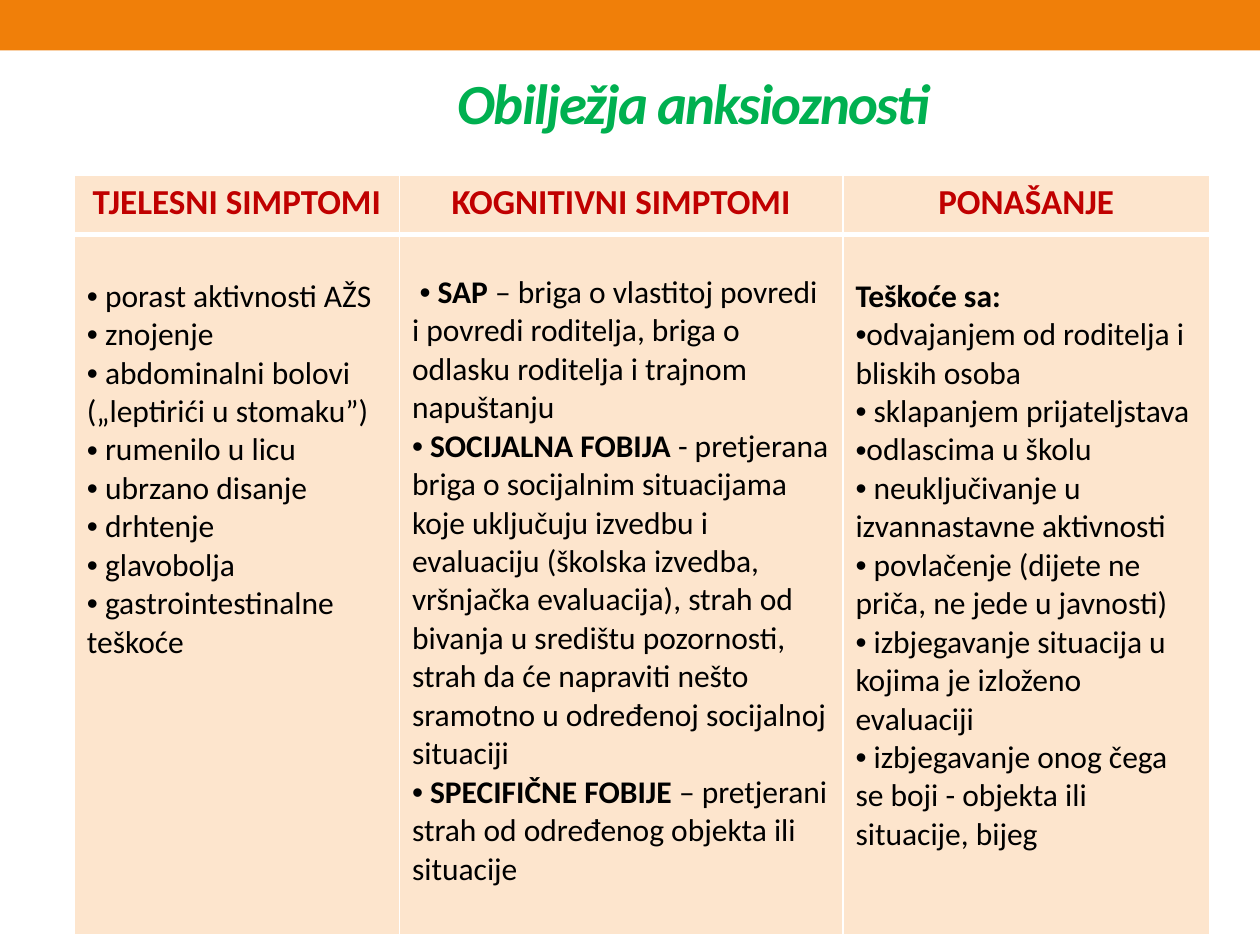
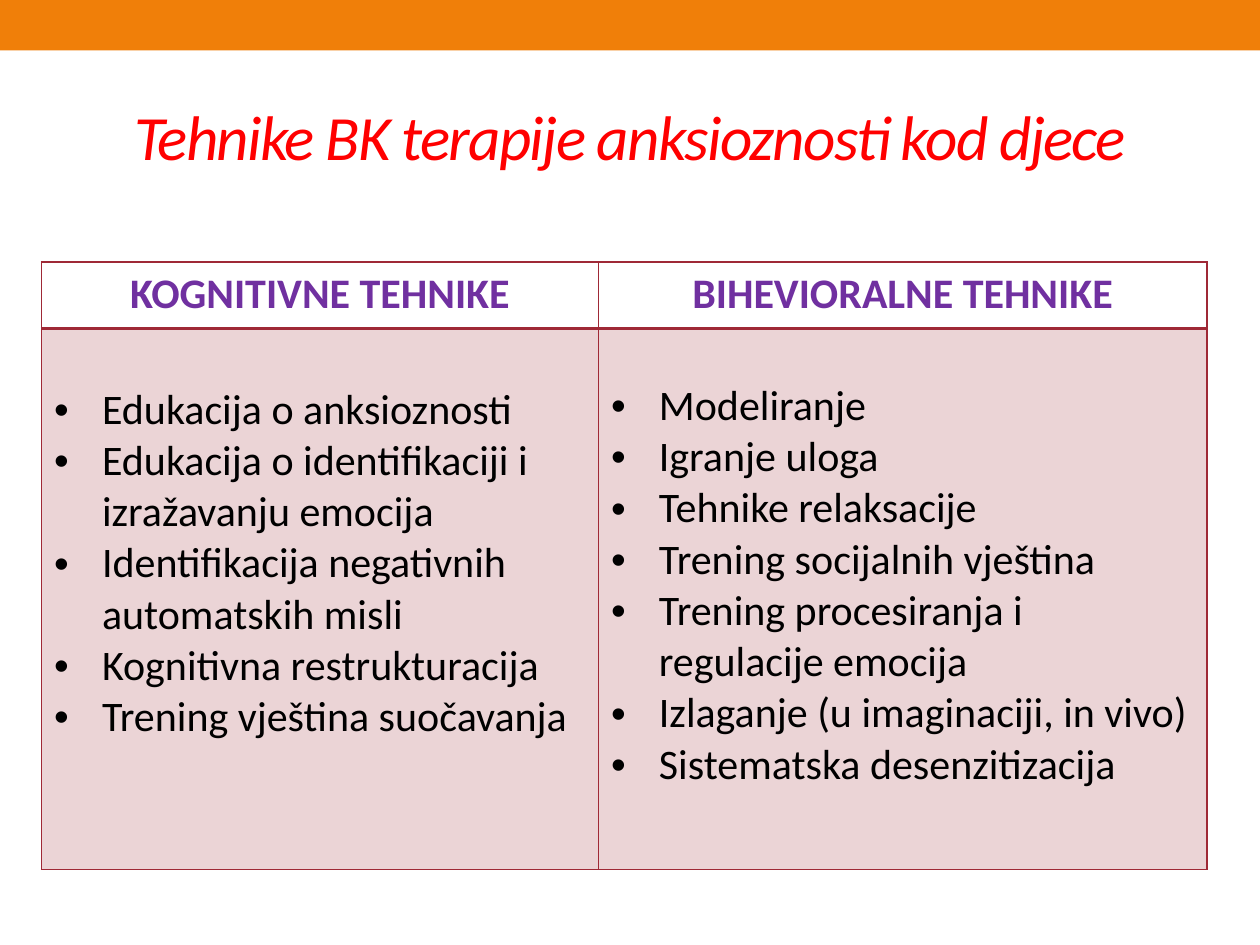
from dataclasses import dataclass

from lxml.etree import SubElement
from pptx import Presentation
from pptx.dml.color import RGBColor
from pptx.enum.shapes import MSO_SHAPE as Shape
from pptx.enum.text import MSO_ANCHOR as Anchor, PP_ALIGN as Align
from pptx.oxml.ns import qn
from pptx.util import Inches, Pt


@dataclass(frozen=True)
class Theme:
    font: str = "Calibri"
    bullet_font: str = "Arial"
    band: str = "F07F09"
    text: str = "000000"
    green: str = "00B050"
    red: str = "FF0000"
    dark_red: str = "C00000"
    purple: str = "7030A0"
    white: str = "FFFFFF"
    peach: str = "FDE5CD"
    wine: str = "9F2936"
    title_size: float = 36
    small_title_size: float = 32.4
    head_size: float = 20
    body_size: float = 18
    large_size: float = 24


THEME = Theme()


@dataclass(frozen=True)
class Title:
    text: str
    left: float
    top: float
    height: float
    size: float
    color: str
    bold: bool = False


@dataclass(frozen=True)
class Item:
    text: str
    lead: str = ""
    bullet: bool = True
    first_indent: float = 0


@dataclass(frozen=True)
class Column:
    head: str
    width: float
    items: list[Item]
    top_margin: float


@dataclass(frozen=True)
class TableStyle:
    head_size: float
    head_color: str
    body_size: float
    border: str
    rule_width: float
    fill: str
    head_fill: str | None = None
    fill_alpha: int = 100
    hanging: float = 0


def items(*texts: str) -> list[Item]:
    return [Item(text) for text in texts]


def format_run(r, size: float, color: str, bold: bool = False, italic: bool = False) -> None:
    font = r.font
    font.name, font.size = THEME.font, Pt(size)
    font.bold, font.italic = bold, italic
    font.color.rgb = RGBColor.from_string(color)


def add_band(s) -> None:
    band = s.shapes.add_shape(Shape.RECTANGLE, 0, 0, Inches(10), Inches(0.4))
    band.shadow.inherit = False
    band.fill.solid()
    band.fill.fore_color.rgb = RGBColor.from_string(THEME.band)
    band.line.fill.background()


def add_title(s, title: Title) -> None:
    sp = s.shapes.add_textbox(Inches(title.left), Inches(title.top), Inches(9), Inches(title.height))
    tf = sp.text_frame
    tf.word_wrap = True
    tf.vertical_anchor = Anchor.MIDDLE
    tf.text = title.text
    p = tf.paragraphs[0]
    p.alignment = Align.CENTER
    r = p.runs[0]
    format_run(r, title.size, title.color, title.bold, italic=True)
    r.font._element.set("spc", "-100")


def set_borders(cell, color: str, widths: dict[str, float]) -> None:
    tc_pr = cell._tc.get_or_add_tcPr()
    for side in ("L", "R", "T", "B"):
        ln = SubElement(tc_pr, qn(f"a:ln{side}"), w=str(Pt(widths.get(side, 1))))
        fill = SubElement(ln, qn("a:solidFill"))
        SubElement(fill, qn("a:srgbClr"), val=color)


def fill_cell(cell, color: str | None, alpha: int = 100) -> None:
    if color is None:
        cell.fill.background()
        return
    cell.fill.solid()
    cell.fill.fore_color.rgb = RGBColor.from_string(color)
    if alpha < 100:
        clr = cell._tc.tcPr.find(f"{qn('a:solidFill')}/{qn('a:srgbClr')}")
        SubElement(clr, qn("a:alpha"), val=str(alpha * 1000))


def set_bullet(p, margin: float, indent: float) -> None:
    p_pr = p._p.get_or_add_pPr()
    p_pr.set("marL", str(Inches(margin)))
    p_pr.set("indent", str(Inches(indent)))
    SubElement(p_pr, qn("a:buFont"), typeface=THEME.bullet_font)
    SubElement(p_pr, qn("a:buChar"), char="•")


def write_head(cell, text: str, style: TableStyle) -> None:
    cell.text_frame.text = text
    p = cell.text_frame.paragraphs[0]
    p.alignment = Align.CENTER
    format_run(p.runs[0], style.head_size, style.head_color, bold=True)
    set_borders(cell, style.border, {"B": style.rule_width})
    fill_cell(cell, style.head_fill)


def write_body(cell, column: Column, style: TableStyle) -> None:
    cell.margin_top = Inches(column.top_margin)
    tf = cell.text_frame
    for i, item in enumerate(column.items):
        p = tf.add_paragraph() if i else tf.paragraphs[0]
        if item.bullet:
            set_bullet(p, style.hanging, item.first_indent - style.hanging)
        for text, bold in ((item.lead, True), (item.text, False)):
            if text:
                r = p.add_run()
                r.text = text
                format_run(r, style.body_size, THEME.text, bold)
    set_borders(cell, style.border, {"T": style.rule_width})
    fill_cell(cell, style.fill, style.fill_alpha)


def add_columns(s, left: float, top: float, heights: tuple[float, float],
                columns: list[Column], style: TableStyle) -> None:
    width = sum(column.width for column in columns)
    frame = s.shapes.add_table(2, len(columns), Inches(left), Inches(top),
                               Inches(width), Inches(sum(heights)))
    table = frame.table
    table.first_row = table.horz_banding = False
    for row, height in zip(table.rows, heights):
        row.height = Inches(height)
    for i, column in enumerate(columns):
        table.columns[i].width = Inches(column.width)
        write_head(table.cell(0, i), column.head, style)
        write_body(table.cell(1, i), column, style)


def add_slide(prs, title: Title):
    s = prs.slides.add_slide(prs.slide_layouts[6])
    add_band(s)
    add_title(s, title)
    return s


SYMPTOMS = [
    Column("TJELESNI SIMPTOMI", 2.58, items(
        " porast aktivnosti AŽS",
        " znojenje",
        " abdominalni bolovi („leptirići u stomaku”)",
        " rumenilo u licu",
        " ubrzano disanje",
        " drhtenje",
        " glavobolja",
        " gastrointestinalne teškoće",
    ), 0.34),
    Column("KOGNITIVNI SIMPTOMI", 3.52, [
        Item(" – briga o vlastitoj povredi i povredi roditelja, briga o odlasku roditelja "
             "i trajnom napuštanju", " SAP", first_indent=0.06),
        Item("- pretjerana briga o socijalnim situacijama koje uključuju izvedbu i evaluaciju "
             "(školska izvedba, vršnjačka evaluacija), strah od bivanja u središtu pozornosti, "
             "strah da će napraviti nešto sramotno u određenoj socijalnoj situaciji",
             " SOCIJALNA FOBIJA "),
        Item("– pretjerani strah od određenog objekta ili situacije", " SPECIFIČNE FOBIJE "),
    ], 0.31),
    Column("PONAŠANJE", 2.91, [Item("", "Teškoće sa:", bullet=False)] + items(
        "odvajanjem od roditelja i bliskih osoba",
        " sklapanjem prijateljstava",
        "odlascima u školu",
        " neuključivanje u izvannastavne aktivnosti",
        " povlačenje (dijete ne priča, ne jede u javnosti)",
        " izbjegavanje situacija u kojima je izloženo evaluaciji",
        " izbjegavanje onog čega se boji - objekta ili situacije, bijeg",
    ), 0.34),
]

TECHNIQUES = [
    Column("KOGNITIVNE TEHNIKE", 4.42, items(
        "Edukacija o anksioznosti",
        "Edukacija o identifikaciji i izražavanju emocija",
        "Identifikacija negativnih automatskih misli",
        "Kognitivna restrukturacija",
        "Trening vještina suočavanja",
    ), 0.44),
    Column("BIHEVIORALNE TEHNIKE", 4.83, items(
        "Modeliranje",
        "Igranje uloga",
        "Tehnike relaksacije",
        "Trening socijalnih vještina",
        "Trening procesiranja i regulacije emocija",
        "Izlaganje (u imaginaciji, in vivo)",
        "Sistematska desenzitizacija",
    ), 0.41),
]

SYMPTOM_STYLE = TableStyle(THEME.head_size, THEME.dark_red, THEME.body_size, THEME.white, 3,
                           THEME.peach, head_fill=THEME.peach)
TECHNIQUE_STYLE = TableStyle(THEME.large_size, THEME.purple, THEME.large_size, THEME.wine, 2,
                             THEME.wine, fill_alpha=20, hanging=0.38)


def main() -> None:
    prs = Presentation()
    prs.slide_width, prs.slide_height = Inches(10), Inches(7.5)

    s = add_slide(prs, Title("Obilježja anksioznosti", 1, 0.49, 0.63,
                             THEME.small_title_size, THEME.green, bold=True))
    add_columns(s, 0.59, 1.39, (0.47, 5.56), SYMPTOMS, SYMPTOM_STYLE)

    s = add_slide(prs, Title("Tehnike BK terapije anksioznosti kod djece", 0.5, 0.61, 0.92,
                             THEME.title_size, THEME.red))
    add_columns(s, 0.33, 2.08, (0.53, 4.29), TECHNIQUES, TECHNIQUE_STYLE)

    prs.save("out.pptx")


if __name__ == "__main__":
    main()
